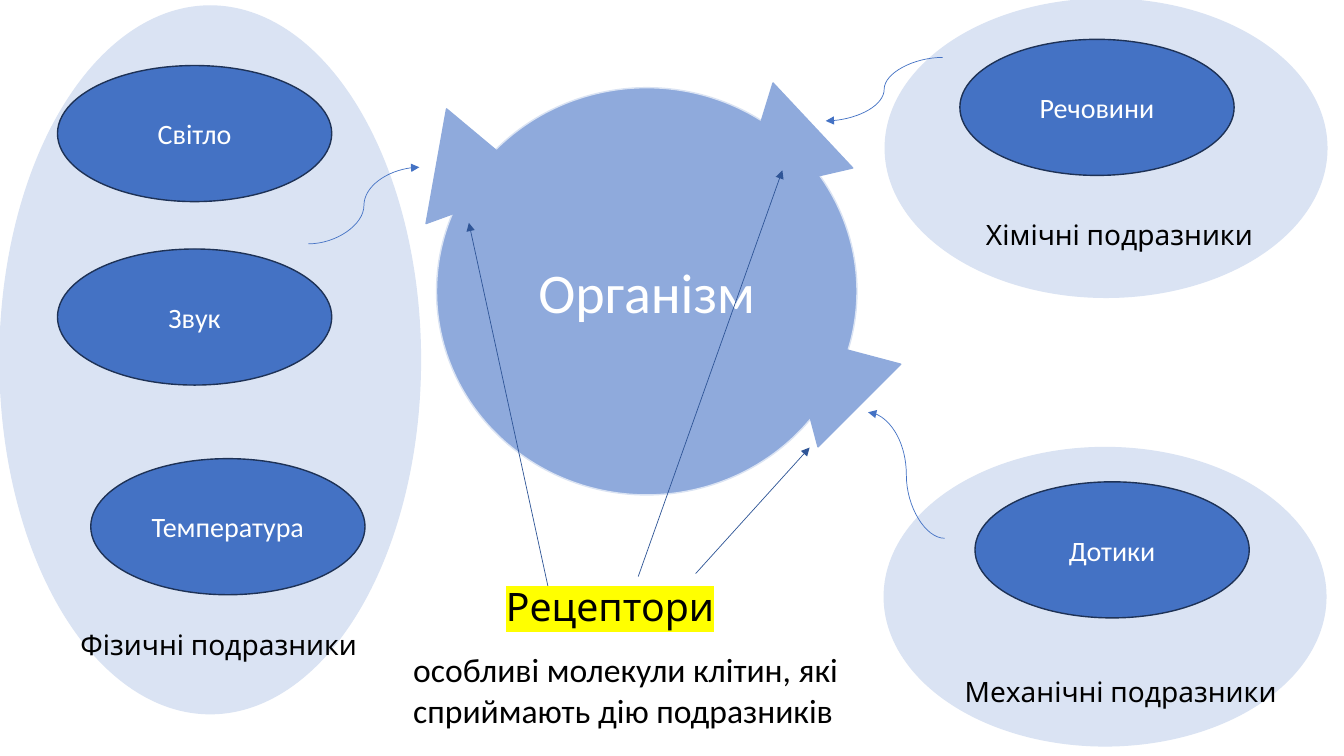
from lxml import etree
from pptx import Presentation
from pptx.dml.color import RGBColor
from pptx.enum.shapes import MSO_CONNECTOR, MSO_SHAPE
from pptx.enum.text import MSO_ANCHOR, MSO_AUTO_SIZE, PP_ALIGN
from pptx.oxml.ns import qn
from pptx.util import Inches, Pt

OVAL, TRIANGLE = MSO_SHAPE.OVAL, MSO_SHAPE.ISOSCELES_TRIANGLE
CURVE, STRAIGHT = MSO_CONNECTOR.CURVE, MSO_CONNECTOR.STRAIGHT
MIDDLE, CENTER = MSO_ANCHOR.MIDDLE, PP_ALIGN.CENTER
GROW = MSO_AUTO_SIZE.SHAPE_TO_FIT_TEXT

COLORS = {
    "pale": "DAE3F3", "organism": "8FAADC", "stimulus": "4472C4",
    "outline": "1E3256", "pointer": "2F5597", "white": "FFFFFF",
    "black": "000000", "marker": "FFFF00",
}

# Content: left, top, width, height in inches
GROUPS = [(8.77, 4.44, 4.38, 2.96), (8.78, -0.01, 4.38, 2.96), (0, 0.06, 4.17, 7.02)]
ORGANISM = ("Організм", (4.33, 0.87, 4.17, 4.04))
STIMULUS_SIZE = (2.72, 1.35)
STIMULI = [  # text, left, top
    ("Світло", 0.57, 0.65),
    ("Звук", 0.57, 2.47),
    ("Температура", 0.9, 4.55),
    ("Речовини", 9.52, 0.39),
    ("Дотики", 9.67, 4.78),
]
RECEPTOR_SIZE = (1.16, 1)
RECEPTORS = [(4.02, 1.05, 340), (7.2, 0.81, 347), (7.59, 3.17, 315)]  # left, top, rotation
SIGNALS = [  # start x, start y, end x, end y
    (3.06, 2.42, 4.16, 1.66),
    (9.37, 5.34, 8.61, 4.09),
    (9.35, 0.57, 8.19, 1.2),
]
POINTERS = [
    (6.9, 5.69, 8.03, 4.44),
    (5.44, 5.84, 4.65, 2.21),
    (6.33, 5.72, 7.76, 1.69),
]
GROUP_LABELS = [
    ("Фізичні подразники", (0.7, 6.18, 3, 0.44)),
    ("Хімічні подразники", (9.68, 2.11, 3, 0.44)),
    ("Механічні подразники", (9.47, 6.64, 3.34, 0.44)),
]
TERM = ("Рецептори", (4.92, 5.73, 3, 0.57))
DEFINITION = ("особливі молекули клітин, які сприймають дію подразників", (4, 6.39, 4.52, 0.91))


def color(name):
    return RGBColor.from_string(COLORS[name])


def add_span(frame, text, size, font, ink):
    span = frame.paragraphs[0].add_run()
    span.text = text
    span.font.size = Pt(size)
    span.font.color.rgb = color(ink)
    span.font.name = font
    return span


def add_figure(kind, place, fill, line, text=None, size=20):
    figure = page.shapes.add_shape(kind, *map(Inches, place))
    figure.shadow.inherit = False
    figure.fill.solid()
    figure.fill.fore_color.rgb = color(fill)
    figure.line.color.rgb = color(line)
    figure.line.width = Pt(1)
    if text:
        figure.text_frame.vertical_anchor = MIDDLE
        figure.text_frame.paragraphs[0].alignment = CENTER
        add_span(figure.text_frame, text, size, "Calibri", "white")
    return figure


def add_arrow(kind, ends, ink):
    arrow = page.shapes.add_connector(kind, *map(Inches, ends))
    arrow.line.color.rgb = color(ink)
    arrow.line.width = Pt(0.5)
    etree.SubElement(arrow.line._get_or_add_ln(), qn("a:tailEnd"), type="triangle")
    etree.SubElement(arrow._element.spPr, qn("a:effectLst"))


def add_label(text, place, size, font):
    box = page.shapes.add_textbox(*map(Inches, place))
    box.text_frame.word_wrap = True
    box.text_frame.auto_size = GROW
    return add_span(box.text_frame, text, size, font, "black")


def highlight(span, ink):
    fill = span.font._element.find(qn("a:solidFill"))
    marker = etree.Element(qn("a:highlight"))
    etree.SubElement(marker, qn("a:srgbClr"), val=COLORS[ink])
    fill.addnext(marker)


deck = Presentation()
deck.slide_width, deck.slide_height = Inches(13.33), Inches(7.5)
page = deck.slides.add_slide(deck.slide_layouts[6])

# Stimulus groups, organism and single stimuli
for place in GROUPS:
    add_figure(OVAL, place, "pale", "pale")
add_figure(OVAL, ORGANISM[1], "organism", "pale", ORGANISM[0], 40)
for text, left, top in STIMULI:
    add_figure(OVAL, (left, top, *STIMULUS_SIZE), "stimulus", "outline", text)

# Signals from the groups to the organism
for ends in SIGNALS:
    add_arrow(CURVE, ends, "stimulus")

# Group labels
for text, place in GROUP_LABELS:
    add_label(text, place, 20, "Karla")

# Receptors and the arrows that point at them
for left, top, rotation in RECEPTORS:
    receptor = add_figure(TRIANGLE, (left, top, *RECEPTOR_SIZE), "organism", "organism")
    receptor.rotation = rotation
for ends in POINTERS:
    add_arrow(STRAIGHT, ends, "pointer")

# Term and its definition
highlight(add_label(*TERM, 28, "Karla"), "marker")
add_label(*DEFINITION, 24, "Calibri")

deck.save("out.pptx")
